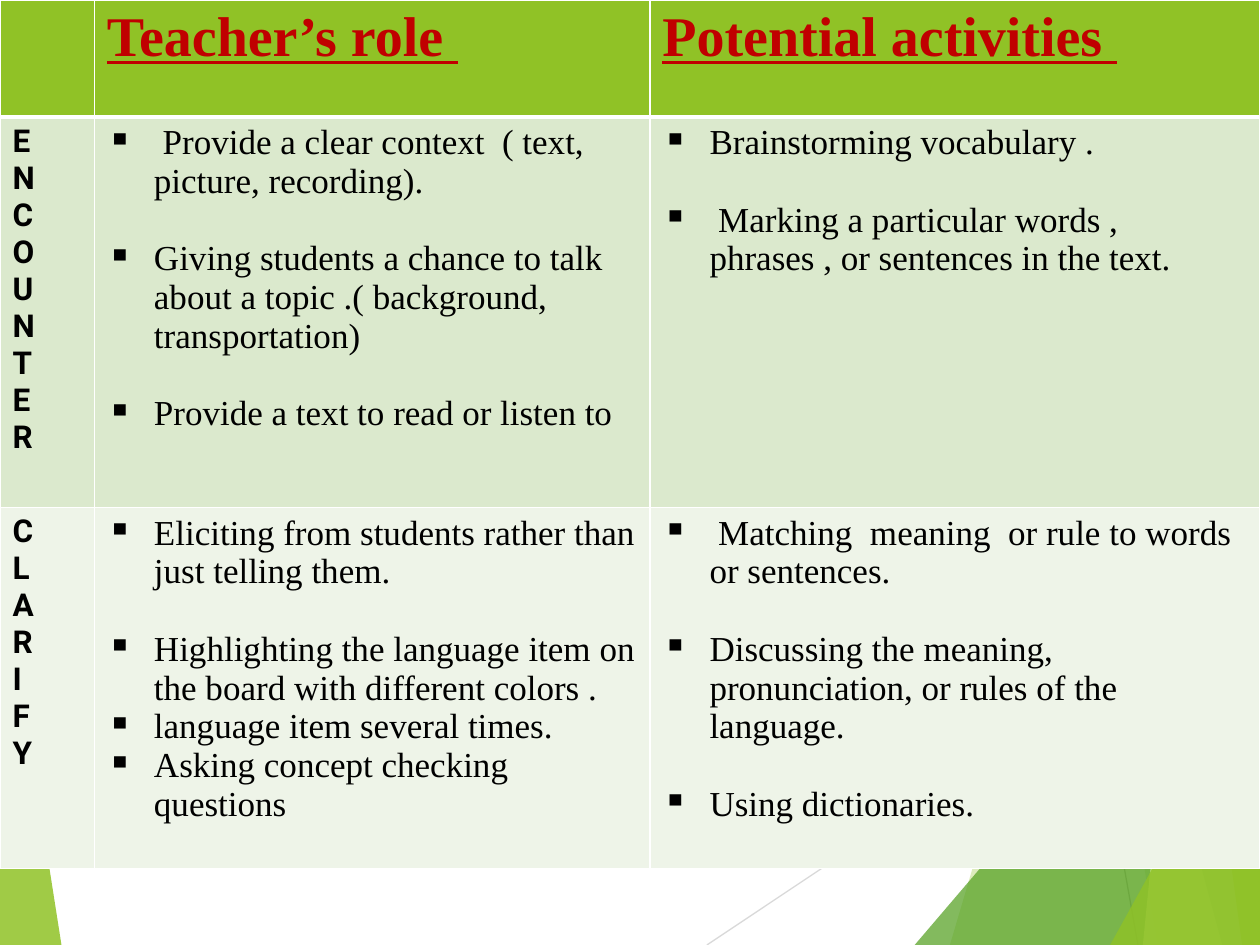
from pptx import Presentation
from pptx.dml.color import RGBColor
from pptx.enum.shapes import MSO_CONNECTOR as Connector
from pptx.oxml import parse_xml
from pptx.oxml.ns import nsdecls, qn
from pptx.oxml.xmlchemy import OxmlElement as new_element
from pptx.util import Cm, Pt

WIDTH, HEIGHT = 25.4, 19.05
COLUMN_WIDTHS = (1.9, 11.2, 12.3)
ROW_HEIGHTS = (2.36, 7.87, 7.28)
ROW_FILLS = ("90C226", "DBE9CD", "EEF4E8")
LINE_GAP = 22

HEADING = {"size": Pt(32), "name": "Times New Roman", "bold": True, "underline": True}
STAGE = {"size": Pt(18), "name": "Roboto", "bold": True}
POINT = {"size": Pt(20), "name": "Times New Roman", "bold": False}

HEADINGS = ("Teacher’s role ", "Potential activities ")
STAGES = (
    ("ENCOUNTER",
     ((" Provide a clear context  ( text, picture, recording).", LINE_GAP),
      ("Giving students a chance to talk about a topic .( background, transportation)", LINE_GAP),
      ("Provide a text to read or listen to", 0)),
     (("Brainstorming vocabulary .", LINE_GAP),
      (" Marking a particular words , phrases , or sentences in the text.", 0))),
    ("CLARIFY",
     (("Eliciting from students rather than just telling them.", LINE_GAP),
      ("Highlighting the language item on the board with different colors .", 0),
      ("language item several times.", 0),
      ("Asking concept checking questions", 0)),
     ((" Matching  meaning  or rule to words or sentences.", LINE_GAP),
      ("Discussing the meaning, pronunciation, or rules of the language.", LINE_GAP),
      ("Using dictionaries.", 0))),
)

LEFT_FACET = (((0, 11.15), (1.24, HEIGHT), (0, HEIGHT)), "90C226", 85)
RAYS = (
    ((14.25, HEIGHT), (WIDTH, 11.61), "D9D9D9"),
    ((19.56, 0), (22.94, HEIGHT), "BFBFBF"),
)
RIGHT_FACETS = (
    ((24.77, 0), (19.15, HEIGHT), "90C226", 30),
    ((20.02, 0), (23.34, HEIGHT), "90C226", 20),
    ((WIDTH, 10.9), (18.44, HEIGHT), "54A021", 72),
    ((19.48, 0), (24.64, HEIGHT), "3F7819", 70),
    ((24.92, 0), (23.04, HEIGHT), "C0E474", 70),
    ((22.43, 0), (25.04, HEIGHT), "90C226", 65),
    ((WIDTH, 13.59), (22.38, HEIGHT), "90C226", 80),
)


def paint(color_owner, hex_color):
    color_owner.rgb = RGBColor.from_string(hex_color)


def apply_format(target, values):
    for attribute, value in values.items():
        setattr(target, attribute, value)


def add_facet(slide, corners, hex_color, opacity):
    start, *others = [(Cm(x), Cm(y)) for x, y in corners]
    builder = slide.shapes.build_freeform(*start)
    builder.add_line_segments(others, close=True)
    facet = builder.convert_to_shape()
    facet.shadow.inherit = False
    facet.line.fill.background()
    facet.fill.solid()
    paint(facet.fill.fore_color, hex_color)
    alpha = new_element("a:alpha")
    alpha.set("val", str(opacity * 1000))
    facet.element.spPr.find(qn("a:solidFill"))[0].append(alpha)


def add_ray(slide, start, end, hex_color):
    ray = slide.shapes.add_connector(
        Connector.STRAIGHT, *[Cm(length) for length in start + end])
    ray.line.width = Pt(0.75)
    paint(ray.line.color, hex_color)
    ray.element.spPr.append(new_element("a:effectLst"))


def add_backdrop(slide):
    add_facet(slide, *LEFT_FACET)
    for ray in RAYS:
        add_ray(slide, *ray)
    for top, bottom, hex_color, opacity in RIGHT_FACETS:
        corners = (top, bottom, (WIDTH, HEIGHT), (WIDTH, top[1]))
        add_facet(slide, corners, hex_color, opacity)


def set_borders(cell, top, bottom):
    properties = cell._tc.get_or_add_tcPr()
    for side, points in {"L": 1, "R": 1, "T": top, "B": bottom}.items():
        properties.append(parse_xml(
            f'<a:ln{side} {nsdecls("a")} w="{Pt(points)}"><a:solidFill>'
            f'<a:srgbClr val="FFFFFF"/></a:solidFill></a:ln{side}>'))


def write_lines(cell, lines, font_format, hex_color):
    for index, line in enumerate(lines):
        frame = cell.text_frame
        paragraph = frame.add_paragraph() if index else frame.paragraphs[0]
        run = paragraph.add_run()
        run.text = line
        apply_format(run.font, font_format)
        paint(run.font.color, hex_color)


def write_points(cell, points):
    write_lines(cell, [text for text, _ in points], POINT, "000000")
    for paragraph, (_, gap) in zip(cell.text_frame.paragraphs, points):
        paragraph.space_after = Pt(gap)
        properties = paragraph._p.get_or_add_pPr()
        properties.set("marL", str(Cm(0.95)))
        properties.set("indent", str(-Cm(0.95)))
        bullet = new_element("a:buChar")
        bullet.set("char", "▪")
        properties.append(bullet)


def add_stage_table(slide):
    table = slide.shapes.add_table(
        len(ROW_HEIGHTS), len(COLUMN_WIDTHS), 0, 0,
        Cm(WIDTH), Cm(sum(ROW_HEIGHTS))).table
    for column, width in zip(table.columns, COLUMN_WIDTHS):
        column.width = Cm(width)
    for index, (row, height, fill) in enumerate(zip(table.rows, ROW_HEIGHTS, ROW_FILLS)):
        row.height = Cm(height)
        for cell in row.cells:
            set_borders(cell, top=3 if index == 1 else 1, bottom=3 if index == 0 else 1)
            cell.fill.solid()
            paint(cell.fill.fore_color, fill)
    for column, heading in enumerate(HEADINGS, start=1):
        write_lines(table.cell(0, column), [heading], HEADING, "C00000")
    for row, (stage, *point_lists) in enumerate(STAGES, start=1):
        write_lines(table.cell(row, 0), stage, STAGE, "000000")
        for column, points in enumerate(point_lists, start=1):
            write_points(table.cell(row, column), points)


def main():
    deck = Presentation()
    apply_format(deck, {"slide_width": Cm(WIDTH), "slide_height": Cm(HEIGHT)})
    slide = deck.slides.add_slide(deck.slide_layouts[6])
    add_backdrop(slide)
    add_stage_table(slide)
    deck.save("out.pptx")


if __name__ == "__main__":
    main()
